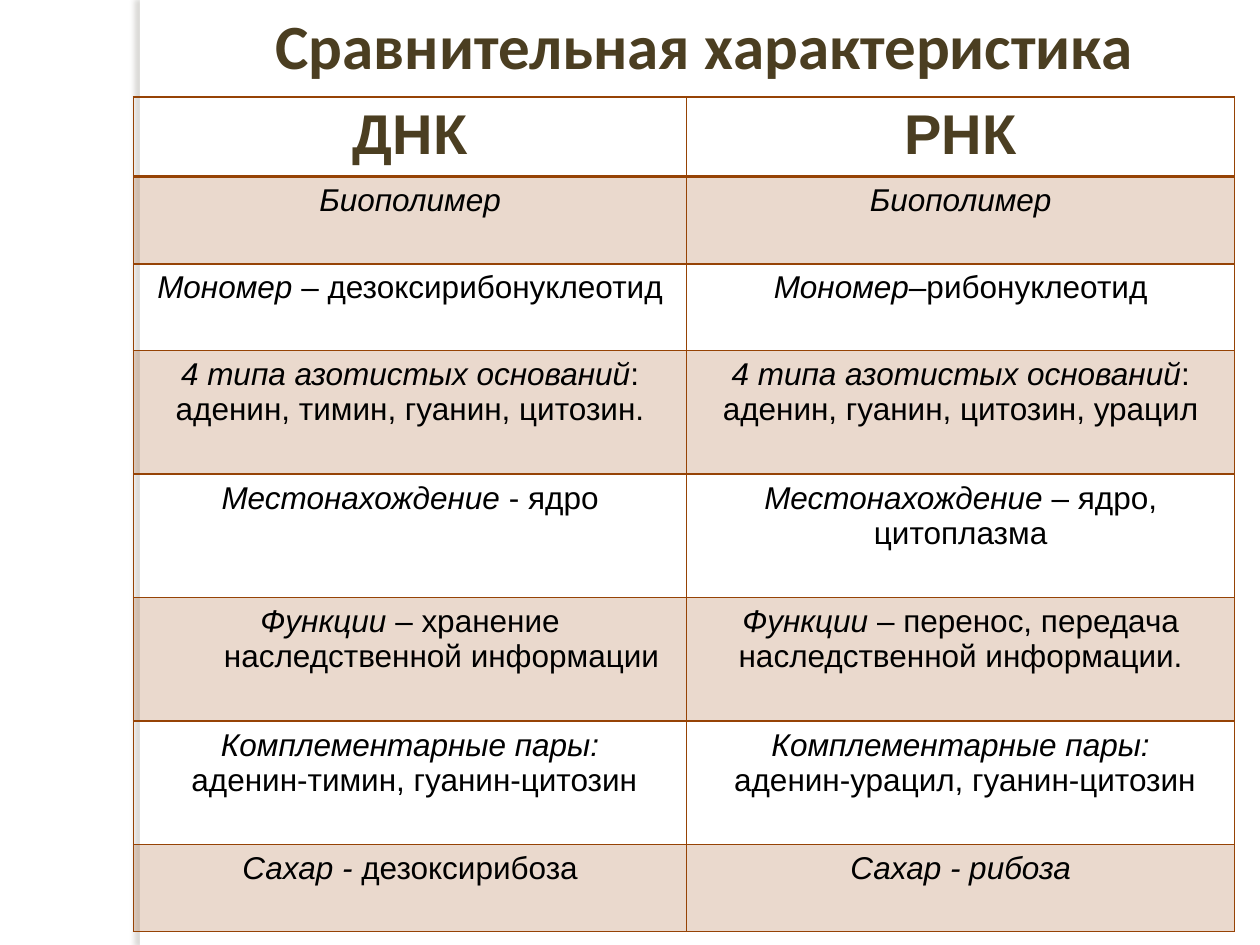
from lxml.etree import SubElement
from pptx import Presentation
from pptx.dml.color import RGBColor
from pptx.enum.shapes import MSO_SHAPE
from pptx.enum.text import MSO_ANCHOR, MSO_AUTO_SIZE, PP_ALIGN
from pptx.oxml import parse_xml
from pptx.oxml.ns import nsdecls, qn
from pptx.util import Inches, Pt

WHITE = RGBColor(0xFF, 0xFF, 0xFF)
BLACK = RGBColor(0, 0, 0)
HEADING = RGBColor(0x4B, 0x3E, 0x21)
BROWN = RGBColor(0x96, 0x43, 0x05)
SHADOW = RGBColor(0x73, 0x6F, 0x63)

COLUMN_WIDTHS = (4.39, 4.35)
ROW_HEIGHTS = (0.62, 0.69, 0.69, 0.98, 0.98, 0.98, 0.98, 0.69)
HEADERS = ("ДНК", "РНК")
HANGING_CELLS = {(2, 1), (5, 0), (6, 1)}

# Each cell is a list of paragraphs, each an (italic, upright) pair.
BODY = (
    ([("Биополимер", "")], [("Биополимер", "")]),
    ([("Мономер", " – дезоксирибонуклеотид")],
     [("Мономер", "–рибонуклеотид")]),
    ([("4 типа азотистых оснований", ": аденин, тимин, гуанин, цитозин.")],
     [("4 типа азотистых оснований", ": аденин, гуанин, цитозин, урацил")]),
    ([("Местонахождение ", "- ядро")],
     [("Местонахождение ", "– ядро, цитоплазма")]),
    ([("Функции", " – хранение наследственной информации")],
     [("Функции", " – перенос, передача наследственной информации.")]),
    ([("Комплементарные пары:", ""), ("", " аденин-тимин, гуанин-цитозин")],
     [("Комплементарные пары:", ""), ("", " аденин-урацил, гуанин-цитозин")]),
    ([("Сахар - ", "дезоксирибоза")], [("Сахар - рибоза", "")]),
)


def format_paragraph(para, font_name, size, color, bold):
    para.alignment = PP_ALIGN.CENTER
    para.font.name = font_name
    para.font.size = Pt(size)
    para.font.bold = bold
    para.font.color.rgb = color


def add_side_strip(page, deck):
    strip = page.shapes.add_shape(MSO_SHAPE.RECTANGLE, Inches(1.11), 0,
                                  Inches(0.08), deck.slide_height)
    strip.fill.solid()
    strip.fill.fore_color.rgb = WHITE
    strip.line.fill.background()
    strip.shadow.inherit = False
    effects = strip.element.spPr.find(qn("a:effectLst"))
    effects.append(parse_xml(
        f'<a:outerShdw {nsdecls("a")} blurRad="{Pt(3)}" dist="{Pt(3)}" '
        f'dir="10800000" rotWithShape="0"><a:srgbClr val="{SHADOW}">'
        '<a:alpha val="25000"/></a:srgbClr></a:outerShdw>'))
    page.shapes.title.element.addprevious(strip.element)


def set_title(page, text):
    title = page.shapes.title
    title.left, title.top = Inches(1.77), 0
    title.width, title.height = Inches(7.64), Inches(0.71)
    frame = title.text_frame
    frame.text = text
    frame.auto_size = MSO_AUTO_SIZE.SHAPE_TO_FIT_TEXT
    frame.vertical_anchor = MSO_ANCHOR.MIDDLE
    format_paragraph(frame.paragraphs[0], "Calibri", 36, HEADING, True)


def fill_cell(cell, shaded):
    if not shaded:
        cell.fill.background()
        return
    cell.fill.solid()
    cell.fill.fore_color.rgb = BROWN
    color = cell.fill._xPr.find(qn("a:solidFill"))[0]
    SubElement(color, qn("a:alpha"), val="20000")


def draw_borders(cell, top, bottom):
    properties = cell._tc.get_or_add_tcPr()
    widths = {"lnL": 1, "lnR": 1, "lnT": top, "lnB": bottom}
    for position, (side, width) in enumerate(widths.items()):
        properties.insert(position, parse_xml(
            f'<a:{side} {nsdecls("a")} w="{Pt(width)}"><a:solidFill>'
            f'<a:srgbClr val="{BROWN}"/></a:solidFill></a:{side}>'))


def write_body(cell, paragraphs, hanging):
    frame = cell.text_frame
    for index, (italic, upright) in enumerate(paragraphs):
        para = frame.add_paragraph() if index else frame.paragraphs[0]
        format_paragraph(para, "Arial", 18, BLACK, False)
        if hanging:
            properties = para._p.get_or_add_pPr()
            properties.set("marL", str(Inches(0.5)))
            properties.set("indent", str(-Inches(0.5)))
        for text, slanted in ((italic, True), (upright, False)):
            if text:
                span = para.add_run()
                span.text = text
                span.font.italic = slanted


def add_comparison_table(page):
    table = page.shapes.add_table(
        len(ROW_HEIGHTS), len(COLUMN_WIDTHS), Inches(1.06), Inches(0.77),
        Inches(sum(COLUMN_WIDTHS)), Inches(sum(ROW_HEIGHTS))).table
    table.first_row = table.horz_banding = False
    for column, width in zip(table.columns, COLUMN_WIDTHS):
        column.width = Inches(width)
    for row_index, height in enumerate(ROW_HEIGHTS):
        table.rows[row_index].height = Inches(height)
        for column_index in range(len(COLUMN_WIDTHS)):
            cell = table.cell(row_index, column_index)
            fill_cell(cell, shaded=row_index % 2 == 1)
            draw_borders(cell, top=2 if row_index == 1 else 1,
                         bottom=2 if row_index == 0 else 1)
            if row_index == 0:
                cell.text = HEADERS[column_index]
                format_paragraph(cell.text_frame.paragraphs[0],
                                 "Arial", 32, HEADING, True)
            else:
                write_body(cell, BODY[row_index - 1][column_index],
                           (row_index, column_index) in HANGING_CELLS)


def main():
    deck = Presentation()
    deck.slide_width, deck.slide_height = Inches(10), Inches(7.5)
    page = deck.slides.add_slide(deck.slide_layouts.get_by_name("Title Only"))
    set_title(page, "Сравнительная характеристика")
    add_side_strip(page, deck)
    add_comparison_table(page)
    deck.save("out.pptx")


if __name__ == "__main__":
    main()
